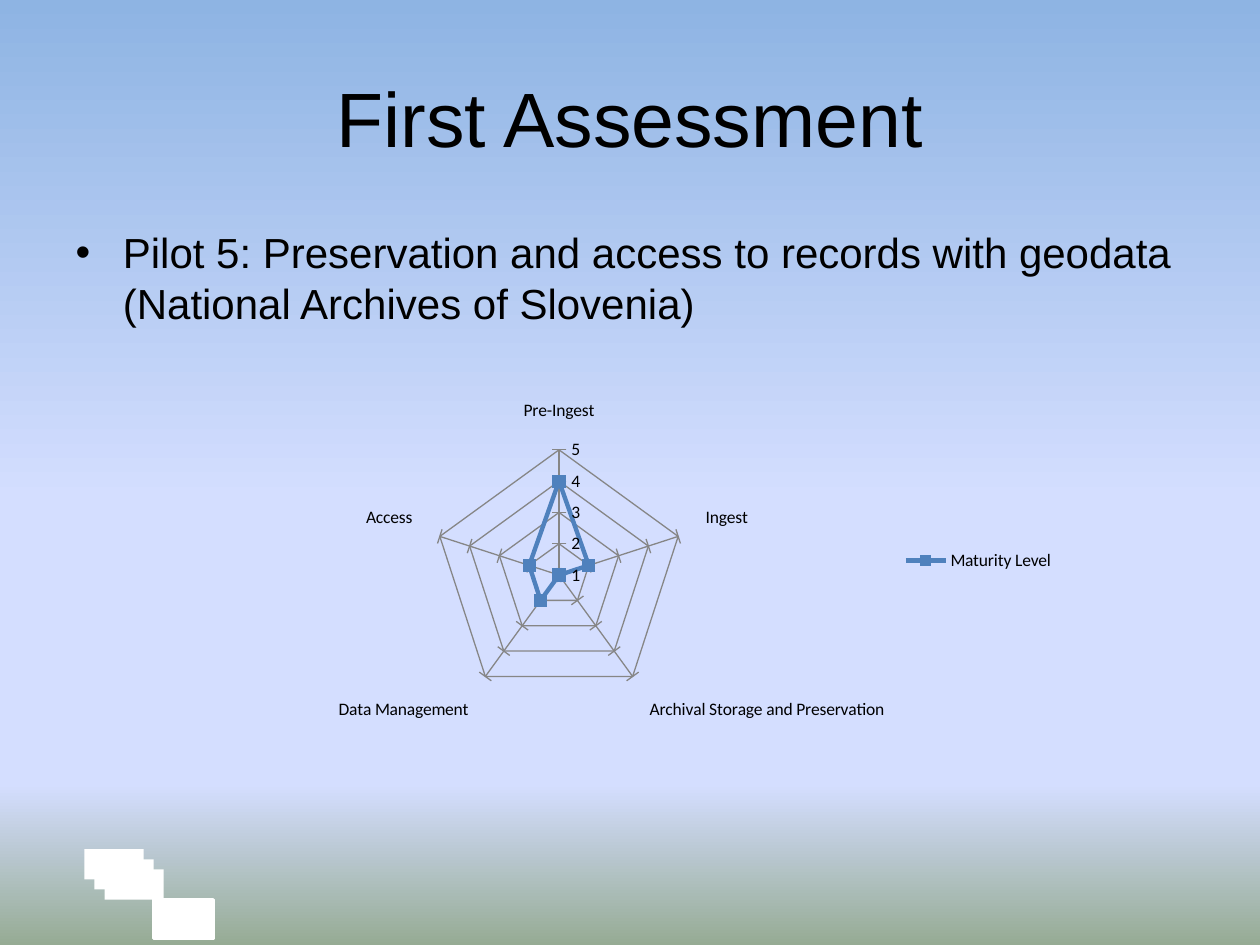
from lxml.etree import SubElement
from pptx import Presentation
from pptx.chart.data import CategoryChartData
from pptx.dml.color import RGBColor
from pptx.enum.chart import (XL_CHART_TYPE, XL_LEGEND_POSITION,
                             XL_MARKER_STYLE, XL_TICK_MARK)
from pptx.enum.shapes import MSO_SHAPE
from pptx.enum.text import MSO_ANCHOR, PP_ALIGN
from pptx.oxml.ns import qn
from pptx.util import Inches, Pt

BLACK = RGBColor(0x00, 0x00, 0x00)
WHITE = RGBColor(0xFF, 0xFF, 0xFF)
GRAY = RGBColor(0x86, 0x86, 0x86)
BLUE = RGBColor(0x4F, 0x81, 0xBD)
SKY = RGBColor(0x8E, 0xB4, 0xE3)
HAZE = RGBColor(0xD4, 0xDE, 0xFF)
GRASS = RGBColor(0x96, 0xAB, 0x94)


def put(item, **vals):
    for key, val in vals.items():
        setattr(item, key, val)


def style(font, name, size):
    put(font, name=name, size=Pt(size))
    font.color.rgb = BLACK


prs = Presentation()
put(prs, slide_width=Inches(10), slide_height=Inches(7.5))
slide = prs.slides.add_slide(prs.slide_layouts[1])

# Background gradient, top to bottom
fill = slide.background.fill
fill.gradient()
fill.gradient_angle = 270
stops = fill._fill._gradFill.find(qn("a:gsLst"))
for old in list(stops):
    stops.remove(old)
for pos, tone in ((0, SKY), (53, HAZE), (83, HAZE), (100, GRASS)):
    stop = SubElement(stops, qn("a:gs"), pos=str(pos * 1000))
    SubElement(stop, qn("a:srgbClr"), val=str(tone))

# White blocks at the foot, behind the text
blocks = [(0.67 + 0.08 * n, 6.74 + 0.08 * n, 0.24) for n in range(3)]
blocks.append((1.22, 7.14, 0.31))
tree = slide.shapes._spTree
for left, top, high in blocks:
    block = slide.shapes.add_shape(MSO_SHAPE.RECTANGLE, Inches(left),
                                   Inches(top), Inches(0.47), Inches(high))
    block.shadow.inherit = False
    block.fill.solid()
    block.fill.fore_color.rgb = WHITE
    block.line.fill.background()
    tree.insert(2, block._element)
block.line.color.rgb = WHITE
block.line.width = Pt(2)

# Title
title = slide.shapes.title
put(title, left=Inches(0.5), top=Inches(0.3),
    width=Inches(9), height=Inches(1.25))
put(title.text_frame, text="First Assessment",
    vertical_anchor=MSO_ANCHOR.MIDDLE)
line = title.text_frame.paragraphs[0]
line.alignment = PP_ALIGN.CENTER
style(line.runs[0].font, "Arial", 44)

# Bulleted list
body = slide.placeholders[1]
put(body, left=Inches(0.5), top=Inches(1.75),
    width=Inches(9), height=Inches(4.95))
body.text_frame.text = ("Pilot 5: Preservation and access to records with "
                        "geodata (National Archives of Slovenia)")
line = body.text_frame.paragraphs[0]
line.space_before = Pt(0)
style(line.runs[0].font, "Arial", 24)

# Radar chart
data = CategoryChartData()
data.categories = ["Pre-Ingest", "Ingest",
                   "Archival Storage and Preservation",
                   "Data Management", "Access"]
data.add_series("Maturity Level", (4, 2, 1, 2, 2))
chart = slide.shapes.add_chart(
    XL_CHART_TYPE.RADAR_MARKERS, Inches(2.56), Inches(2.65),
    Inches(5.91), Inches(3.6), data).chart
put(chart, has_title=False, has_legend=True)
style(chart.font, "Calibri", 10)
put(chart.legend, position=XL_LEGEND_POSITION.RIGHT, include_in_layout=False)
chart.plots[0].vary_by_categories = False

# Axes and grid
put(chart.category_axis, has_major_gridlines=True,
    major_tick_mark=XL_TICK_MARK.OUTSIDE)
put(chart.value_axis, minimum_scale=1, maximum_scale=5, major_unit=1,
    has_major_gridlines=True, major_tick_mark=XL_TICK_MARK.CROSS)
put(chart.value_axis.tick_labels, number_format="0",
    number_format_is_linked=False)
for axis in (chart.category_axis, chart.value_axis):
    for rule in (axis.format.line, axis.major_gridlines.format.line):
        rule.color.rgb = GRAY
        rule.width = Pt(0.75)

# Series line and markers
level = chart.plots[0].series[0]
level.smooth = False
level.format.line.color.rgb = BLUE
level.format.line.width = Pt(2.5)
put(level.marker, style=XL_MARKER_STYLE.SQUARE, size=7)
level.marker.format.fill.solid()
level.marker.format.fill.fore_color.rgb = BLUE
level.marker.format.line.color.rgb = BLUE

prs.save("out.pptx")
